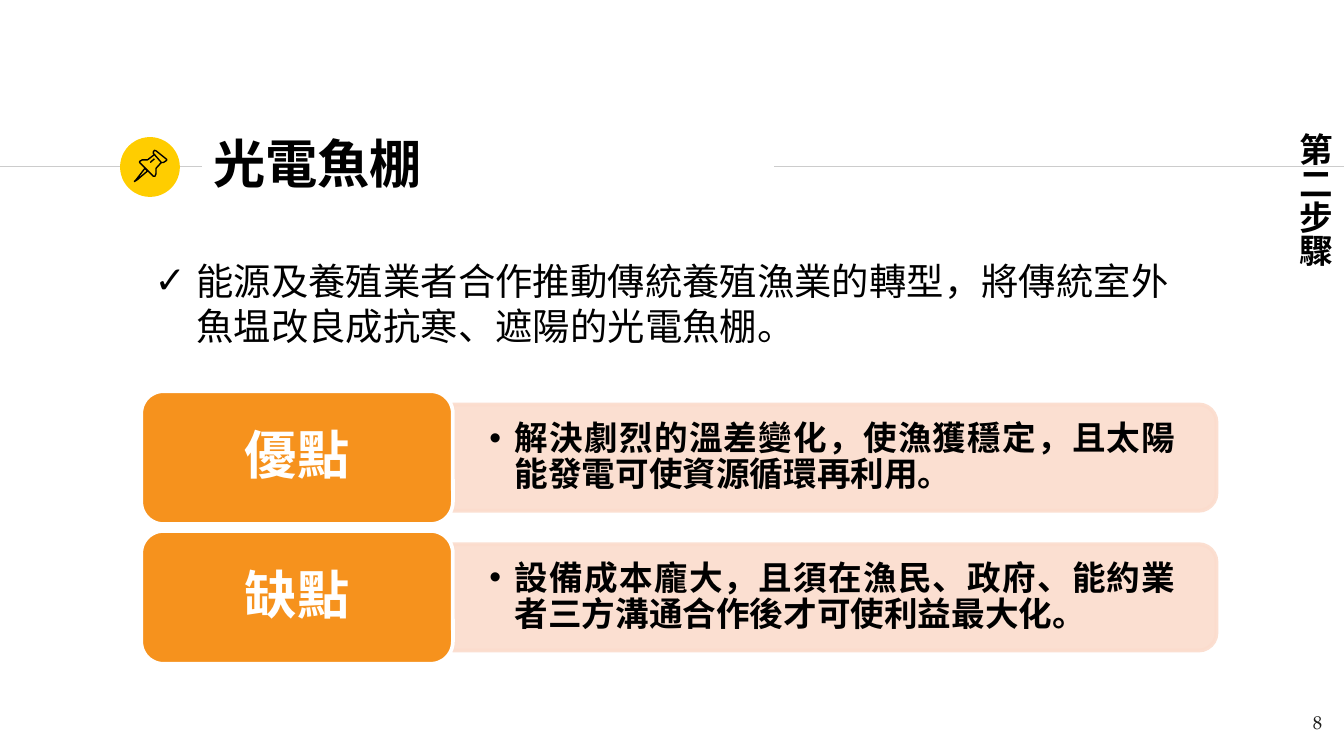
from lxml import etree
from pptx import Presentation
from pptx.dml.color import RGBColor
from pptx.enum import shapes, text
from pptx.oxml.ns import qn
from pptx.util import Cm, Pt

# Content
TITLE = "光電魚棚"
SUMMARY = "能源及養殖業者合作推動傳統養殖漁業的轉型，將傳統室外魚塭改良成抗寒、遮陽的光電魚棚。"
STEP = "第二步驟"
PAGE = "8"
CARDS = [
    ("優點", "解決劇烈的溫差變化，使漁獲穩定，且太陽能發電可使資源循環再利用。"),
    ("缺點", "設備成本龐大，且須在漁民、政府、能約業者三方溝通合作後才可使利益最大化。"),
]
# Pin outlines in hundredths of a centimetre: (points, closed)
PIN = [
    ([(274, 318), (257, 340), (254, 343), (259, 340), (279, 323)], True),
    ([(292, 292), (305, 307), (309, 307), (312, 305), (315, 303), (315, 301),
      (295, 285), (292, 284), (290, 287), (290, 290)], True),
    ([(292, 292), (279, 302), (274, 302), (269, 302), (264, 305), (264, 307),
      (290, 333), (293, 333), (295, 328), (295, 318), (305, 307)], False),
    ([(284, 307), (292, 300)], False),
]

THEME = {
    "ink": "000000", "page": "1D1D1B", "white": "FFFFFF", "rule": "CCCCCC",
    "badge": "FFCD00", "label": "F6921D", "panel": "FBDCCD",
    "jp": "Noto Sans CJK JP", "sc": "Noto Sans CJK SC", "serif": "TeX Gyre Pagella",
    "big": 28, "body": 20, "small": 18, "number": 10,
}
LEFT, MIDDLE = text.PP_ALIGN.LEFT, text.MSO_ANCHOR.MIDDLE

prs = Presentation()
prs.slide_width, prs.slide_height = Cm(25.4), Cm(14.28)
slide = prs.slides.add_slide(prs.slide_layouts[1])


def rgb(name):
    return RGBColor.from_string(THEME[name])


def apply(target, values):
    for name, value in values.items():
        setattr(target, name, value)


def place(shape, left, top, width, height):
    apply(shape, {"left": Cm(left), "top": Cm(top),
                  "width": Cm(width), "height": Cm(height)})
    return shape


def textbox(*box):
    return slide.shapes.add_textbox(*map(Cm, box))


def write(shape, words, size, font="jp", color="ink", bold=True, align=LEFT,
          anchor=text.MSO_ANCHOR.TOP, wrap=True, margins=(0.25, 0.13), spacing=1.0):
    frame = shape.text_frame
    across, down = map(Cm, margins)
    apply(frame, {"auto_size": text.MSO_AUTO_SIZE.NONE, "word_wrap": wrap,
                  "vertical_anchor": anchor, "margin_left": across,
                  "margin_right": across, "margin_top": down, "margin_bottom": down})
    paragraph = frame.paragraphs[0]
    apply(paragraph, {"alignment": align, "line_spacing": spacing, "space_before": Pt(0)})
    run = paragraph.add_run()
    run.text = words
    apply(run.font, {"name": THEME[font], "size": Pt(THEME[size]), "bold": bold})
    run.font.color.rgb = rgb(color)
    east_asian = etree.SubElement(run.font._element, qn("a:ea"))
    east_asian.set("typeface", THEME[font])
    return paragraph


def bullet(paragraph, mark, indent):
    props = paragraph._p.get_or_add_pPr()
    props.set("marL", str(Cm(indent)))
    props.set("indent", str(-Cm(indent)))
    etree.SubElement(props, qn("a:buFont")).set("typeface", "Arial")
    etree.SubElement(props, qn("a:buChar")).set("char", mark)


def paint(shape, fill, line=None, width=0.75):
    shape.shadow.inherit = False
    if fill:
        shape.fill.solid()
        shape.fill.fore_color.rgb = rgb(fill)
    else:
        shape.fill.background()
    if line:
        shape.line.color.rgb = rgb(line)
        shape.line.width = Pt(width)
    else:
        shape.line.fill.background()


# Rules beside the title
RULE_Y = 3.15
for start, end in [(0, 3.81), (14.63, 25.4)]:
    rule = slide.shapes.add_connector(shapes.MSO_CONNECTOR.STRAIGHT,
                                      Cm(start), Cm(RULE_Y), Cm(end), Cm(RULE_Y))
    rule.line.color.rgb = rgb("rule")
    rule.line.width = Pt(0.75)
    etree.SubElement(rule._element.spPr, qn("a:effectLst"))

# Badge with pin
badge = slide.shapes.add_shape(shapes.MSO_SHAPE.OVAL, Cm(2.27), Cm(2.59), Cm(1.13), Cm(1.13))
paint(badge, "badge")
for points, closed in PIN:
    builder = slide.shapes.build_freeform(*points[0], scale=Cm(0.01))
    builder.add_line_segments(points[1:], close=closed)
    paint(builder.convert_to_shape(), None, "ink")

# Title, summary, step and page number
title, summary = slide.placeholders
write(place(title, 3.78, 2.34, 4.5, 1.45), TITLE, "big", wrap=False)
bullet(write(place(summary, 2.67, 4.75, 19.84, 1.96), SUMMARY, "body", bold=False),
       "✓", 0.79)
step = textbox(24.21, 2.39, 1.27, 2.77)
write(step, STEP, "small", wrap=False)
step.text_frame._txBody.bodyPr.set("vert", "eaVert")
write(textbox(23.72, 13.18, 1.52, 1.09), PAGE, "number", "serif", "page", bold=False,
      align=text.PP_ALIGN.RIGHT, margins=(0.25, 0.25))

# Cards: a label overlapping a panel rounded on its right side
CARD_X, CARD_Y, PITCH = 2.67, 7.39, 2.64
LABEL_W, LABEL_H = 5.89, 2.51
PANEL_W, PANEL_H = 14.43, 2.01
panel_x = CARD_X + LABEL_W
for row, (heading, detail) in enumerate(CARDS):
    top = CARD_Y + row * PITCH
    middle = top + LABEL_H / 2
    # The panel is upright before its quarter turn
    panel = slide.shapes.add_shape(
        shapes.MSO_SHAPE.ROUND_2_SAME_RECTANGLE,
        Cm(panel_x + (PANEL_W - PANEL_H) / 2), Cm(middle - PANEL_W / 2),
        Cm(PANEL_H), Cm(PANEL_W))
    panel.rotation = 90
    paint(panel, "panel", "panel", 2)
    for tint in panel._element.spPr.iter(qn("a:srgbClr")):
        etree.SubElement(tint, qn("a:alpha")).set("val", "90000")
    bullet(write(textbox(panel_x, middle - 0.9, 14.35, 1.8), detail, "small", "sc",
                 align=text.PP_ALIGN.JUSTIFY, anchor=MIDDLE, margins=(0.69, 0.36),
                 spacing=0.9), "•", 0.48)
    label = slide.shapes.add_shape(shapes.MSO_SHAPE.ROUNDED_RECTANGLE,
                                   Cm(CARD_X), Cm(top), Cm(LABEL_W), Cm(LABEL_H))
    paint(label, "label", "white", 2)
    write(label, heading, "big", color="white", align=text.PP_ALIGN.CENTER,
          anchor=MIDDLE, spacing=0.9)

prs.save("out.pptx")
